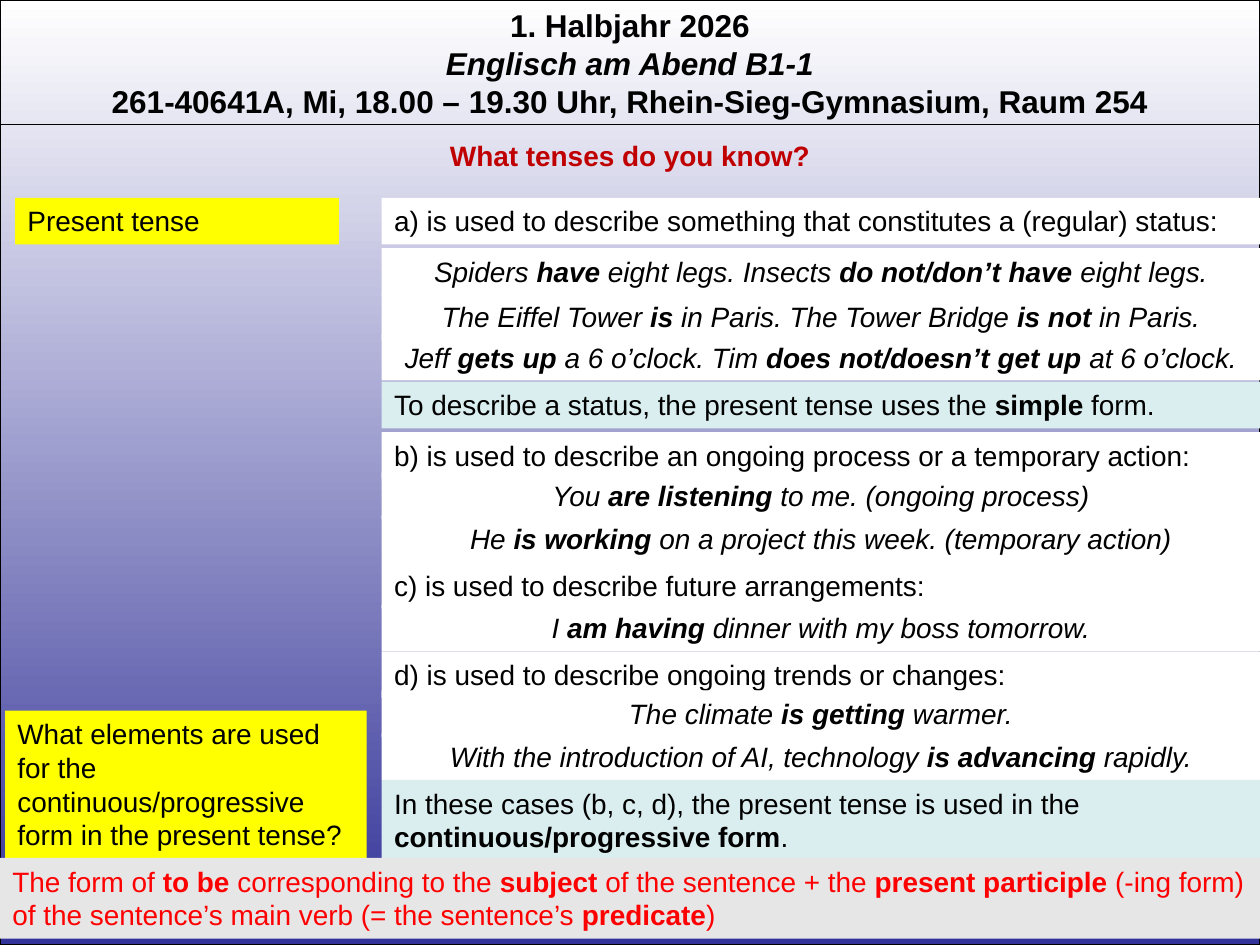
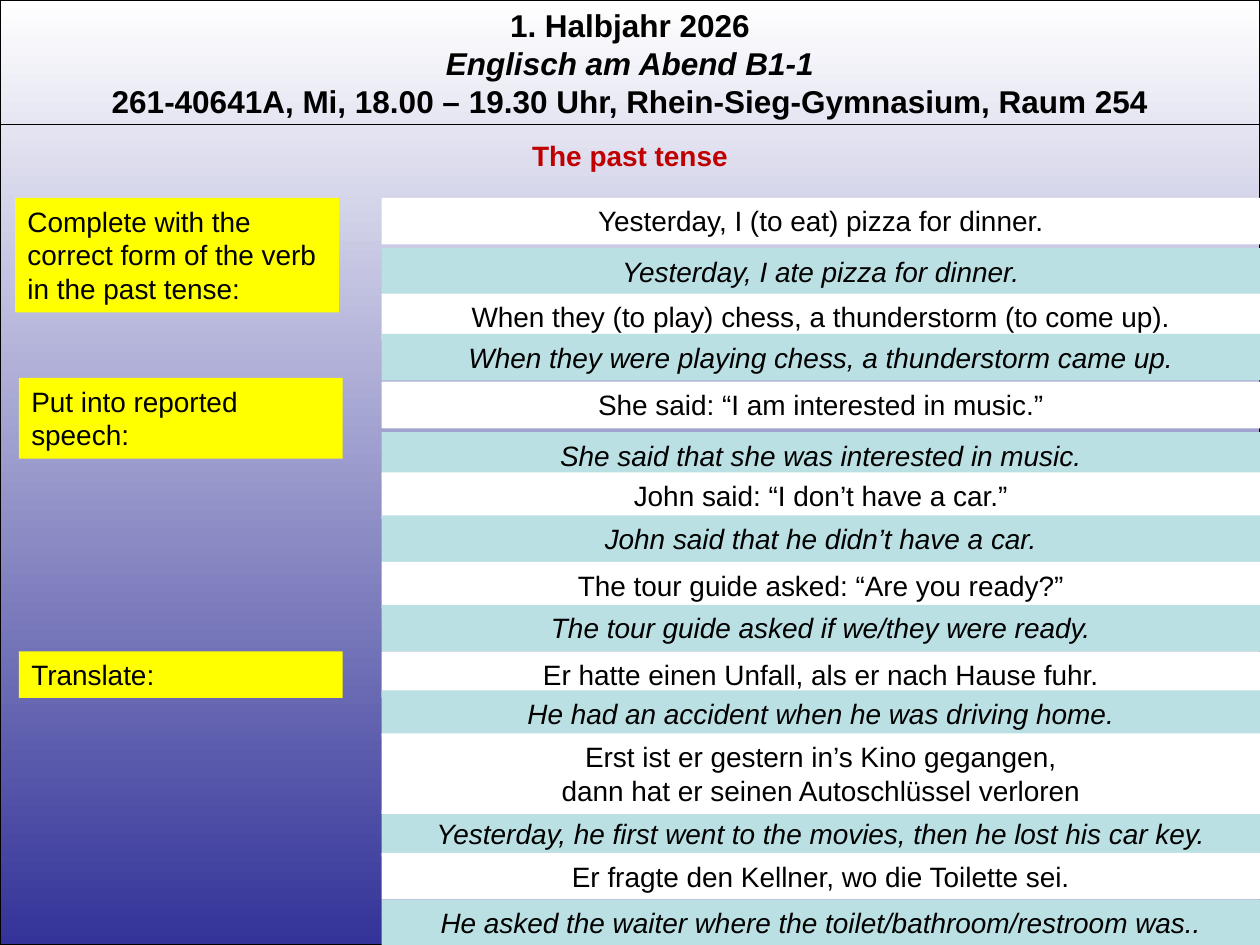
from collections import namedtuple

from lxml import etree
from pptx import Presentation
from pptx.dml.color import RGBColor
from pptx.enum.shapes import MSO_CONNECTOR as Connector, MSO_SHAPE as Shape
from pptx.enum.text import MSO_ANCHOR as Anchor, PP_ALIGN as Align
from pptx.oxml.ns import qn
from pptx.util import Inches, Pt

FONT = "Arial"
BLACK, WHITE, INDIGO = "000000", "FFFFFF", "333399"
YELLOW, RED, DARK_RED = "FFFF00", "FF0000", "C00000"
PALE_TEAL, TEAL, GREY = "DAEDEF", "BBE0E3", "E6E6E6"

PAGE_WIDTH, PAGE_HEIGHT = 10, 7.5
HEADER_RULE_TOP = 0.99
ROW_LEFT, ROW_WIDTH = 3.03, 6.97
ROW_TOPS = [1.57, 1.97, 2.33, 2.65, 3.03, 3.43, 3.75, 4.09, 4.46, 4.8, 5.17, 5.48, 5.82]
LABEL_WIDTH = 2.57

HEADER = [
    ("1. Halbjahr 2026", False),
    ("Englisch am Abend B1-1", True),
    ("261-40641A, Mi, 18.00 – 19.30 Uhr, Rhein-Sieg-Gymnasium, Raum 254", False),
]

RowStyle = namedtuple("RowStyle", "fill align italic")
RULE = RowStyle(WHITE, Align.LEFT, False)
EXAMPLE = RowStyle(WHITE, Align.CENTER, True)
CONCLUSION = RowStyle(PALE_TEAL, Align.LEFT, False)
TASK = RowStyle(WHITE, Align.CENTER, False)
ANSWER = RowStyle(TEAL, Align.CENTER, True)

PRESENT_ROWS = [
    (RULE, "a) is used to describe something that constitutes a (regular) status:"),
    (EXAMPLE, "Spiders **have** eight legs. Insects **do not/don’t have** eight legs."),
    (EXAMPLE, "The Eiffel Tower **is** in Paris. The Tower Bridge **is not** in Paris."),
    (EXAMPLE, "Jeff **gets up** a 6 o’clock. Tim **does not/doesn’t get up** at 6 o’clock."),
    (CONCLUSION, "To describe a status, the present tense uses the **simple** form."),
    (RULE, "b) is used to describe an ongoing process or a temporary action:"),
    (EXAMPLE, "You **are listening** to me. (ongoing process)"),
    (EXAMPLE, "He **is working** on a project this week. (temporary action)"),
    (RULE, "c) is used to describe future arrangements:"),
    (EXAMPLE, "I **am having** dinner with my boss tomorrow."),
    (RULE, "d) is used to describe ongoing trends or changes:"),
    (EXAMPLE, "The climate **is getting** warmer."),
    (EXAMPLE, "With the introduction of AI, technology **is advancing** rapidly."),
]

PAST_ROWS = [
    (TASK, "Yesterday, I (to eat) pizza for dinner."),
    (ANSWER, "Yesterday, I ate pizza for dinner."),
    (TASK, "When they (to play) chess, a thunderstorm (to come up)."),
    (ANSWER, "When they were playing chess, a thunderstorm came up."),
    (TASK, "She said: “I am interested in music.”"),
    (ANSWER, "She said that she was interested in music."),
    (TASK, "John said: “I don’t have a car.”"),
    (ANSWER, "John said that he didn’t have a car."),
    (TASK, "The tour guide asked: “Are you ready?”"),
    (ANSWER, "The tour guide asked if we/they were ready."),
    (TASK, "Er hatte einen Unfall, als er nach Hause fuhr."),
    (ANSWER, "He had an accident when he was driving home."),
    (TASK, "Erst ist er gestern in’s Kino gegangen,\ndann hat er seinen Autoschlüssel verloren"),
]


def rgb(color):
    return RGBColor.from_string(color)


def box_height(lines):
    return 0.1 + 0.27 * lines


def add_run(paragraph, text, size, color, bold=False, italic=False):
    run = paragraph.add_run()
    run.text = text
    run.font.name = FONT
    run.font.size = Pt(size)
    run.font.color.rgb = rgb(color)
    run.font.bold = bold
    run.font.italic = italic


def next_paragraph(text_frame, index, align):
    paragraph = text_frame.add_paragraph() if index else text_frame.paragraphs[0]
    paragraph.alignment = align
    return paragraph


def add_background(slide):
    shape = slide.shapes.add_shape(
        Shape.RECTANGLE, 0, 0, Inches(PAGE_WIDTH), Inches(PAGE_HEIGHT))
    shape.shadow.inherit = False
    shape.fill.gradient()
    shape.fill.gradient_angle = 270
    for stop, position, color in zip(shape.fill.gradient_stops, (0, 1), (WHITE, INDIGO)):
        stop.position = position
        stop.color.rgb = rgb(color)
    shape.line.color.rgb = rgb(BLACK)
    shape.line.width = Pt(0.75)


def add_header_rule(slide):
    top = Inches(HEADER_RULE_TOP)
    connector = slide.shapes.add_connector(
        Connector.STRAIGHT, 0, top, Inches(PAGE_WIDTH), top)
    connector.line.color.rgb = rgb(BLACK)
    connector.line.width = Pt(0.75)
    etree.SubElement(connector._element.spPr, qn("a:effectLst"))


def add_heading(slide, top, height, lines, size, color):
    text_box = slide.shapes.add_textbox(
        0, Inches(top), Inches(PAGE_WIDTH), Inches(height))
    text_frame = text_box.text_frame
    text_frame.word_wrap = True
    for index, (text, italic) in enumerate(lines):
        paragraph = next_paragraph(text_frame, index, Align.CENTER)
        add_run(paragraph, text, size, color, bold=True, italic=italic)


def add_box(slide, left, top, width, lines, text, fill,
            align=Align.LEFT, italic=False, color=BLACK):
    shape = slide.shapes.add_shape(
        Shape.RECTANGLE, Inches(left), Inches(top), Inches(width), Inches(box_height(lines)))
    shape.shadow.inherit = False
    shape.fill.solid()
    shape.fill.fore_color.rgb = rgb(fill)
    shape.line.fill.background()
    text_frame = shape.text_frame
    text_frame.word_wrap = True
    text_frame.vertical_anchor = Anchor.TOP
    for index, line in enumerate(text.split("\n")):
        paragraph = next_paragraph(text_frame, index, align)
        for part, words in enumerate(line.split("**")):
            if words:
                add_run(paragraph, words, 16, color, bold=part % 2 == 1, italic=italic)


def add_row(slide, top, style, text, lines=1):
    add_box(slide, ROW_LEFT, top, ROW_WIDTH, lines, text,
            style.fill, style.align, style.italic)


def add_rows(slide, rows):
    for top, (style, text) in zip(ROW_TOPS, rows):
        add_row(slide, top, style, text, lines=text.count("\n") + 1)


def add_label(slide, left, top, lines, text, width=LABEL_WIDTH):
    add_box(slide, left, top, width, lines, text, YELLOW)


def add_lesson_slide(presentation, title):
    slide = presentation.slides.add_slide(presentation.slide_layouts[6])
    add_background(slide)
    add_heading(slide, 0, 1.01, HEADER, 18, BLACK)
    add_header_rule(slide)
    add_heading(slide, 1.05, box_height(1), [(title, False)], 16, DARK_RED)
    return slide


def build_present_slide(presentation):
    slide = add_lesson_slide(presentation, "What tenses do you know?")
    add_label(slide, 0.12, ROW_TOPS[0], 1, "Present tense")
    add_rows(slide, PRESENT_ROWS)
    add_row(slide, 6.19, CONCLUSION,
            "In these cases (b, c, d), the present tense is used in the "
            "**continuous/progressive form**.", lines=2)
    add_label(slide, 0.04, 5.64, 4,
              "What elements are used for the continuous/progressive form "
              "in the present tense?", width=2.87)
    add_box(slide, 0, 6.81, 10.04, 2,
            "The form of **to be** corresponding to the **subject** of the sentence + the "
            "**present participle** (-ing form) of the sentence’s main verb "
            "(= the sentence’s **predicate**)", GREY, color=RED)


def build_past_slide(presentation):
    slide = add_lesson_slide(presentation, "The past tense")
    add_label(slide, 0.12, ROW_TOPS[0], 3,
              "Complete with the correct form of the verb in the past tense:")
    add_row(slide, 6.43, ANSWER,
            "Yesterday, he first went to the movies, then he lost his car key.")
    add_rows(slide, PAST_ROWS)
    add_label(slide, 0.15, 3, 2, "Put into reported speech:")
    add_label(slide, 0.15, ROW_TOPS[10], 1, "Translate:")
    add_row(slide, 6.77, TASK, "Er fragte den Kellner, wo die Toilette sei.")
    add_row(slide, 7.14, ANSWER,
            "He asked the waiter where the toilet/bathroom/restroom was..")


def main():
    presentation = Presentation()
    presentation.slide_width = Inches(PAGE_WIDTH)
    presentation.slide_height = Inches(PAGE_HEIGHT)
    build_present_slide(presentation)
    build_past_slide(presentation)
    presentation.save("out.pptx")


if __name__ == "__main__":
    main()
